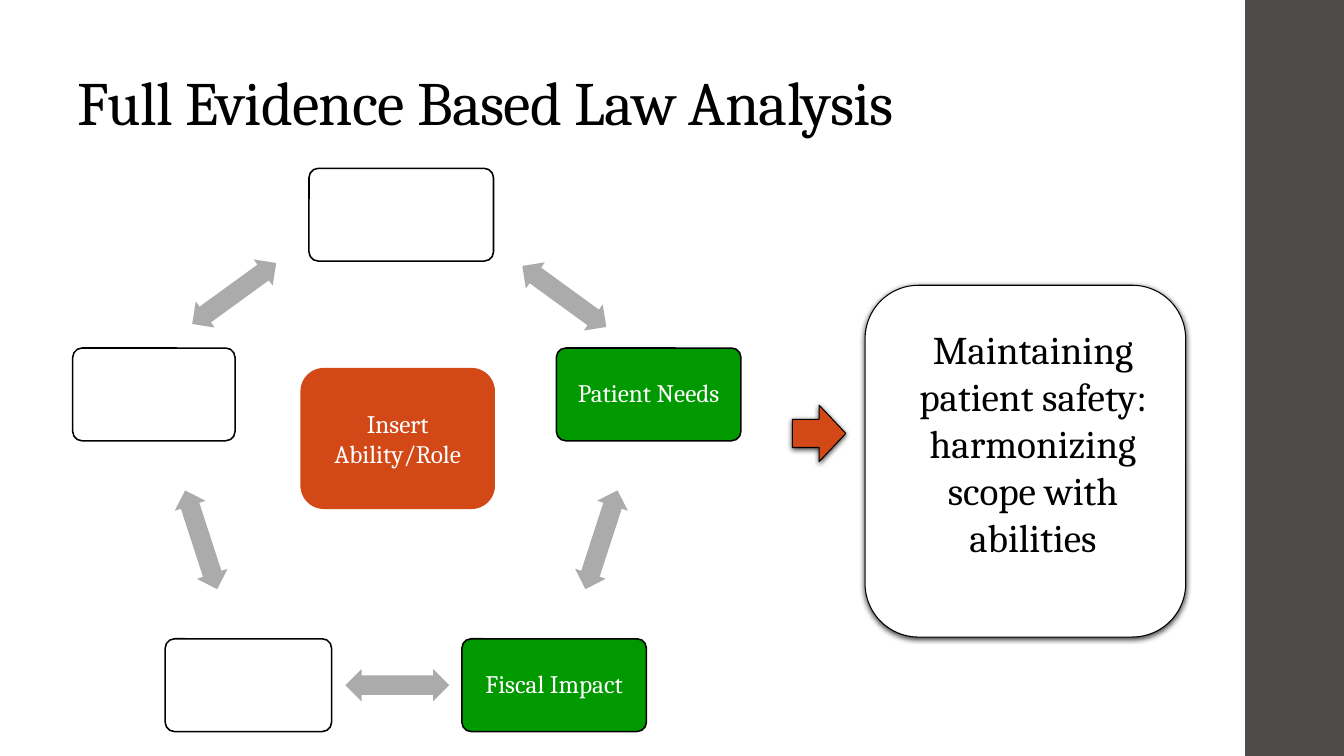
from collections import namedtuple
from math import cos, radians, sin

from lxml.etree import SubElement
from pptx import Presentation
from pptx.dml.color import RGBColor
from pptx.enum.shapes import MSO_SHAPE as Preset
from pptx.enum.text import MSO_ANCHOR as Anchor, PP_ALIGN as Align
from pptx.oxml.ns import qn
from pptx.util import Inches, Pt

Box = namedtuple("Box", "left top width height")
Node = namedtuple("Node", "label width fill")

COLORS = {
    "band": "4F4B4B", "white": "FFFFFF", "black": "000000",
    "green": "009900", "gray": "ABABAB", "orange": "D34817",
}
NODES = [
    Node("", 1.83, "white"),
    Node("Patient Needs", 1.83, "green"),
    Node("Fiscal Impact", 1.83, "green"),
    Node("", 1.65, "white"),
    Node("", 1.61, "white"),
]
ARROW_SHIFTS = [(0.39, -0.08), (0, 0), (-0.04, 0), (0, 0), (-0.43, -0.11)]


def color(name):
    return RGBColor.from_string(COLORS[name])


def lengths(box):
    return [Inches(value) for value in box]


def centered(x, y, width, height):
    return Box(x - width / 2, y - height / 2, width, height)


def write(shape, text, size, tint, align=Align.CENTER, anchor=Anchor.MIDDLE, spacing=1.0, inset=None):
    frame = shape.text_frame
    settings = {"word_wrap": True, "vertical_anchor": anchor}
    if inset is not None:
        for side in ("left", "top", "right", "bottom"):
            settings["margin_" + side] = Inches(inset)
    for name, value in settings.items():
        setattr(frame, name, value)
    para = frame.paragraphs[0]
    para.alignment = align
    para.line_spacing = spacing
    span = para.add_run()
    span.text = text
    for name, value in {"name": "Cambria", "size": Pt(size)}.items():
        setattr(span.font, name, value)
    span.font.color.rgb = color(tint)
    return span


def add_block(page, preset, box, fill, line=None, adjustments=(), rotation=0):
    shape = page.shapes.add_shape(preset, *lengths(box))
    shape.shadow.inherit = False
    shape.fill.solid()
    shape.fill.fore_color.rgb = color(fill)
    if line:
        shape.line.color.rgb = color("black")
        shape.line.width = Pt(line)
    else:
        shape.line.fill.background()
    for index, value in enumerate(adjustments):
        shape.adjustments[index] = value
    shape.rotation = rotation
    return shape


def add_shadow(shape):
    effects = shape._element.spPr.find(qn("a:effectLst"))
    shadow = SubElement(effects, qn("a:outerShdw"), blurRad=str(Pt(4)), dist=str(Pt(1.2)),
                        dir="5400000", algn="ctr", rotWithShape="0")
    tint = SubElement(shadow, qn("a:srgbClr"), val=COLORS["black"])
    SubElement(tint, qn("a:alpha"), val="75000")


def add_title(page, box):
    title = page.shapes.add_textbox(*lengths(box))
    span = write(title, "Full Evidence Based Law Analysis", 44, "black",
                 Align.LEFT, Anchor.BOTTOM, 0.9)
    span._r.get_or_add_rPr().set("spc", "-50")


def add_cycle(page, box):
    node_height = 0.92
    radius = 2.58
    step = 360 / len(NODES)
    center_x = box.left + 3.25
    center_y = box.top + node_height / 2 + radius

    def spoke(distance, angle):
        turn = radians(angle)
        return center_x + distance * sin(turn), center_y - distance * cos(turn)

    for index, (node, shift) in enumerate(zip(NODES, ARROW_SHIFTS)):
        x, y = spoke(radius, index * step)
        shape = add_block(page, Preset.ROUNDED_RECTANGLE, centered(x, y, node.width, node_height),
                          node.fill, 1.1, [0.1])
        if node.label:
            write(shape, node.label, 18, "white", spacing=0.9, inset=0.1)
        x, y = spoke(radius * cos(radians(step / 2)), (index + 0.5) * step)
        add_block(page, Preset.LEFT_RIGHT_ARROW, centered(x + shift[0], y + shift[1], 1.03, 0.32),
                  "gray", adjustments=[0.6, 0.5], rotation=(index + 0.5) * step)

    role = add_block(page, Preset.ROUNDED_RECTANGLE,
                     Box(box.left + 2.25, box.top + 1.98, 1.93, 1.4), "orange")
    write(role, "Insert Ability/Role", 18, "white")


def add_outcome(page, box):
    arrow = add_block(page, Preset.RIGHT_ARROW,
                      Box(box.left, box.top + 1.19, 0.53, 0.56), "orange", 0.75)
    panel = add_block(page, Preset.ROUNDED_RECTANGLE,
                      Box(box.left + 0.72, box.top, box.width - 0.72, box.height), "white", 0.75)
    for shape in (arrow, panel):
        add_shadow(shape)
    message = page.shapes.add_textbox(*lengths(Box(box.left + 0.87, box.top + 0.35, 3.03, 2.46)))
    write(message, "Maintaining patient safety: harmonizing scope with abilities",
          28, "black", anchor=Anchor.TOP)


def main():
    deck = Presentation()
    deck.slide_width, deck.slide_height = Inches(13.33), Inches(7.5)
    page = deck.slides.add_slide(deck.slide_layouts[6])
    add_block(page, Preset.RECTANGLE, Box(12.35, 0, 0.98, 7.5), "band")
    add_title(page, Box(0.67, 0.18, 12, 1.25))
    add_cycle(page, Box(0.73, 1.67, 6.62, 5.58))
    add_outcome(page, Box(7.86, 2.83, 3.9, 3.49))
    deck.save("out.pptx")


if __name__ == "__main__":
    main()
